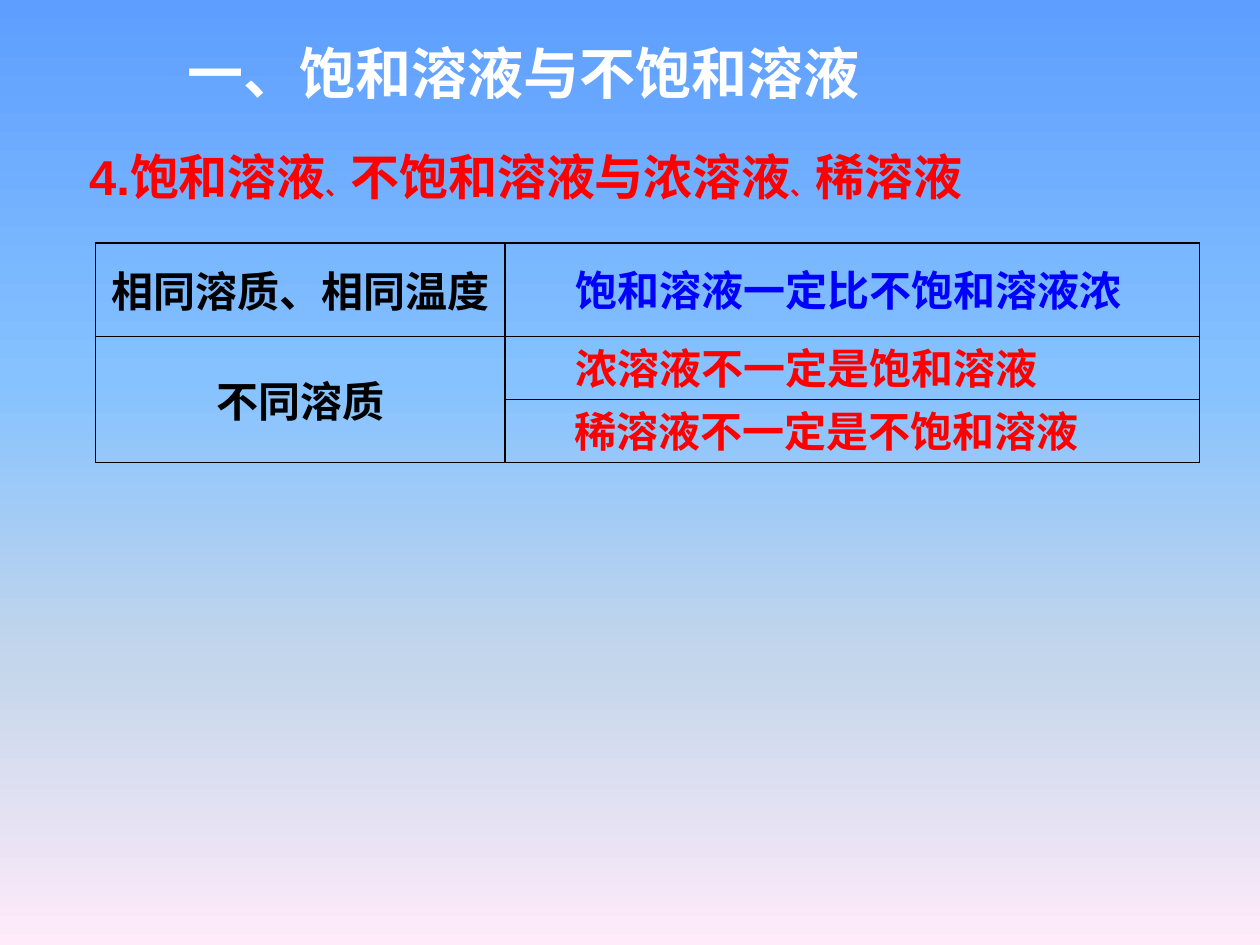
from lxml import etree
from pptx import Presentation
from pptx.dml.color import RGBColor
from pptx.enum.text import MSO_ANCHOR, PP_ALIGN
from pptx.oxml import parse_xml
from pptx.oxml.ns import nsdecls, qn
from pptx.util import Cm, Pt

MIDDLE = MSO_ANCHOR.MIDDLE
LEFT, CENTER = PP_ALIGN.LEFT, PP_ALIGN.CENTER
CJK = "Noto Sans CJK SC"
COLORS = {"white": "FFFFFF", "black": "000000", "red": "FF0000", "blue": "0000FF"}
SKY = [(0, "5E9EFF"), (40, "85C2FF"), (70, "C4D6EB"), (100, "FFEBFA")]


def style(p, size, color, align=LEFT, latin=CJK):
    """Format a whole paragraph, with the CJK font for East Asian text."""
    p.alignment = align
    font = p.font
    font.size, font.bold, font.name = Pt(size), True, latin
    font.color.rgb = RGBColor.from_string(COLORS[color])
    latin_el = font._element.find(qn("a:latin"))
    latin_el.addnext(parse_xml(f'<a:ea {nsdecls("a")} typeface="{CJK}"/>'))


def add_line(sp, text):
    """Prepare a text frame for one vertically centred line and return its paragraph."""
    tf = sp.text_frame
    tf.word_wrap = True
    tf.vertical_anchor = MIDDLE
    p = tf.paragraphs[0]
    p.text = text
    return p


prs = Presentation()
prs.slide_width, prs.slide_height = Cm(25.4), Cm(19.05)
s = prs.slides.add_slide(prs.slide_layouts[5])

# Background gradient, top to bottom
fill = s.background.fill
fill.gradient()
fill.gradient_angle = 270
stops = fill._fill._gradFill.find(qn("a:gsLst"))
for stop in list(stops):
    stops.remove(stop)
for pos, color in SKY:
    gs = etree.SubElement(stops, qn("a:gs"), pos=str(pos * 1000))
    etree.SubElement(gs, qn("a:srgbClr"), val=color)

# Title
title = s.shapes.title
title.left, title.top, title.width, title.height = Cm(3.53), Cm(0.64), Cm(15.62), Cm(1.63)
style(add_line(title, "一、饱和溶液与不饱和溶液"), 32, "white")

# Section heading, with small separators
heading = s.shapes.add_textbox(Cm(1.55), Cm(2.82), Cm(18.85), Cm(1.45))
p = add_line(heading, "")
style(p, 28, "red", latin="Arial")
for text in ["4.饱和溶液", "、", "不饱和溶液与浓溶液", "、", "稀溶液"]:
    r = p.add_run()
    r.text = text
    r.font.size = Pt(14 if text == "、" else 28)

# Comparison table
table = s.shapes.add_table(3, 2, Cm(1.93), Cm(4.9), Cm(22.25), Cm(4.42)).table
table.first_row = table.horz_banding = False
for col, width in zip(table.columns, [8.25, 14]):
    col.width = Cm(width)
for row, height in zip(table.rows, [1.88, 1.27, 1.27]):
    row.height = Cm(height)
for cell in table.iter_cells():
    cell.fill.background()
    tcPr = cell._tc.get_or_add_tcPr()
    for i, side in enumerate(["lnL", "lnR", "lnT", "lnB"]):
        tcPr.insert(i, parse_xml(
            f'<a:{side} {nsdecls("a")} w="12700"><a:solidFill>'
            f'<a:srgbClr val="{COLORS["black"]}"/></a:solidFill></a:{side}>'))
table.cell(1, 0).merge(table.cell(2, 0))
for row, text in enumerate(["相同溶质、相同温度", "不同溶质"]):
    cell = table.cell(row, 0)
    cell.vertical_anchor = MIDDLE
    cell.text = text
    style(cell.text_frame.paragraphs[0], 24, "black", CENTER)

# Conclusions laid over the right column
for text, color, left, top in [
    ("饱和溶液一定比不饱和溶液浓", "blue", 11.35, 5.21),
    ("浓溶液不一定是饱和溶液", "red", 11.35, 6.78),
    ("稀溶液不一定是不饱和溶液", "red", 11.33, 8.05),
]:
    box = s.shapes.add_textbox(Cm(left), Cm(top), Cm(11.8), Cm(1.27))
    style(add_line(box, text), 24, color)

prs.save("out.pptx")
